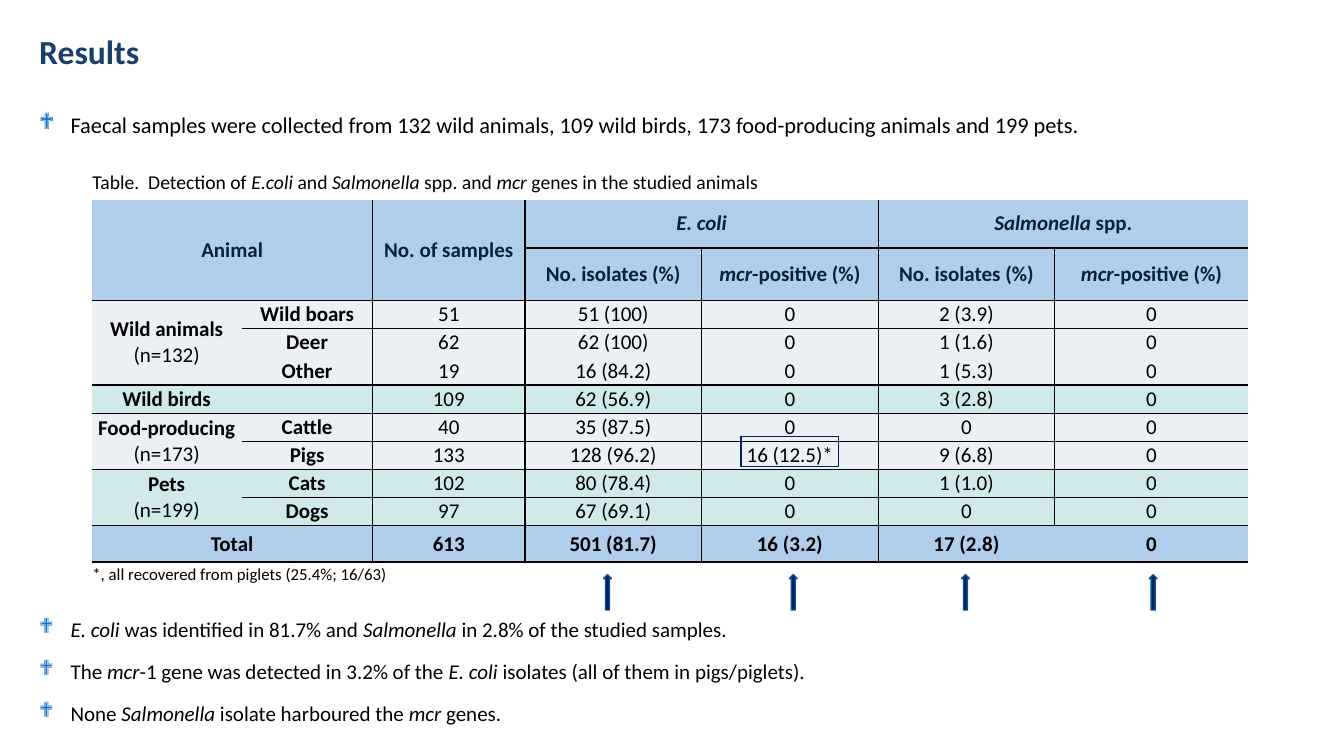
import pptx
import pptx.dml.color
import pptx.enum.shapes
import pptx.enum.text
import pptx.oxml
import pptx.oxml.ns
import pptx.util
import lxml.etree

Cm = pptx.util.Cm
Pt = pptx.util.Pt
Align = pptx.enum.text.PP_ALIGN
Anchor = pptx.enum.text.MSO_ANCHOR
Shape = pptx.enum.shapes.MSO_SHAPE
qn = pptx.oxml.ns.qn

COLORS = {
    "title": "1A3F6C", "text": "000000", "bullet": "0F6FC6",
    "heading": "0C2036", "band": "B0CDEA", "grey": "ECF0F4",
    "teal": "D0EAEC", "mark": "002060", "arrow_edge": "0B5292",
}
NO_GRID_STYLE = "{2D5ABB26-0587-4C30-8999-92F81FD0307C}"

COLUMN_WIDTHS = [3.78, 3.3, 3.84, 4.45, 4.45, 4.45, 4.88]
ROW_HEIGHTS = [1.22, 1.32] + [0.71] * 8 + [0.91]
ROW_FILLS = ["band"] * 2 + ["grey"] * 3 + ["teal"] + ["grey"] * 2 + ["teal"] * 2 + ["band"]
MERGES = [(0, 0, 1, 1), (0, 2, 1, 2), (0, 3, 0, 4), (0, 5, 0, 6),
          (2, 0, 4, 0), (6, 0, 7, 0), (8, 0, 9, 0), (10, 0, 10, 1)]
RULED_COLUMNS = {1, 2, 4}
RULED_ROWS = {1, 4, 5, 7, 9, 10}
DETECTION = [
    ["Animal", "", "No. of samples", "_E. coli_", "", "_Salmonella_ spp.", ""],
    ["", "", "", "No. isolates (%)", "_mcr_-positive (%)", "No. isolates (%)", "_mcr_-positive (%)"],
    ["Wild animals\n(n=132)", "Wild boars", "51", "51 (100)", "0", "2 (3.9)", "0"],
    ["", "Deer", "62", "62 (100)", "0", "1 (1.6)", "0"],
    ["", "Other", "19", "16 (84.2)", "0", "1 (5.3)", "0"],
    ["Wild birds", "", "109", "62 (56.9)", "0", "3 (2.8)", "0"],
    ["Food-producing\n(n=173)", "Cattle", "40", "35 (87.5)", "0", "0", "0"],
    ["", "Pigs", "133", "128 (96.2)", "16 (12.5)*", "9 (6.8)", "0"],
    ["Pets\n(n=199)", "Cats", "102", "80 (78.4)", "0", "1 (1.0)", "0"],
    ["", "Dogs", "97", "67 (69.1)", "0", "0", "0"],
    ["Total", "", "613", "501 (81.7)", "16 (3.2)", "17 (2.8)", "0"],
]
FINDINGS = """_E. coli_ was identified in 81.7% and _Salmonella_ in 2.8% of the studied samples.
The _mcr_-1 gene was detected in 3.2% of the _E. coli_ isolates (all of them in pigs/piglets).
None _Salmonella_ isolate harboured the _mcr_ genes."""


def rgb(name):
    return pptx.dml.color.RGBColor.from_string(COLORS[name])


def add_bullet(paragraph):
    properties = paragraph._p.get_or_add_pPr()
    properties.set("marL", str(Cm(0.79)))
    properties.set("indent", str(-Cm(0.79)))
    color = lxml.etree.SubElement(properties, qn("a:buClr"))
    lxml.etree.SubElement(color, qn("a:srgbClr"), val=COLORS["bullet"])
    lxml.etree.SubElement(properties, qn("a:buFont"), typeface="Wingdings")
    lxml.etree.SubElement(properties, qn("a:buChar"), char="❖")


def write_text(frame, text, font="Calibri", size=15, color="text", bold=False,
               first_bold=False, align=Align.JUSTIFY, before=0, bullet=False):
    for index, line in enumerate(text.split("\n")):
        paragraph = frame.paragraphs[0] if index == 0 else frame.add_paragraph()
        paragraph.alignment = align
        paragraph.space_before = Pt(before)
        if bullet:
            add_bullet(paragraph)
        for part, words in enumerate(line.split("_")):
            if words:
                run = paragraph.add_run()
                run.text = words
                run.font.name = font
                run.font.size = Pt(size)
                run.font.bold = bold or (first_bold and index == 0)
                run.font.italic = part % 2 == 1
                run.font.color.rgb = rgb(color)
        if not line:
            lxml.etree.SubElement(paragraph._p, qn("a:endParaRPr"), sz=str(size * 100))


class ResultsSlide:
    def __init__(self, slide, line_width=1):
        self.slide = slide
        self.line_width = line_width

    def text(self, left, top, width, height, words, wrap=True, anchor=Anchor.TOP, **style):
        box = self.slide.shapes.add_textbox(Cm(left), Cm(top), Cm(width), Cm(height))
        frame = box.text_frame
        frame.word_wrap = wrap
        frame.auto_size = pptx.enum.text.MSO_AUTO_SIZE.SHAPE_TO_FIT_TEXT
        frame.vertical_anchor = anchor
        write_text(frame, words, **style)

    def shape(self, kind, left, top, width, height, line, fill=None, rotation=0):
        mark = self.slide.shapes.add_shape(kind, Cm(left), Cm(top), Cm(width), Cm(height))
        mark.shadow.inherit = False
        mark.rotation = rotation
        if fill:
            mark.fill.solid()
            mark.fill.fore_color.rgb = rgb(fill)
        else:
            mark.fill.background()
        mark.line.color.rgb = rgb(line)
        mark.line.width = Pt(self.line_width)

    def borders(self, cell, row, column):
        sides = {
            "L": column - 1 in RULED_COLUMNS,
            "R": column in RULED_COLUMNS,
            "T": row - 1 in RULED_ROWS or (row == 1 and column >= 3),
            "B": row in RULED_ROWS or (row == 0 and column >= 3),
        }
        properties = cell._tc.get_or_add_tcPr()
        for side, ruled in sides.items():
            if ruled:
                line = lxml.etree.SubElement(properties, qn("a:ln" + side), w=str(Pt(self.line_width)))
                solid = lxml.etree.SubElement(line, qn("a:solidFill"))
                lxml.etree.SubElement(solid, qn("a:srgbClr"), val=COLORS["text"])

    def table(self, left, top, rows):
        frame = self.slide.shapes.add_table(
            len(rows), len(COLUMN_WIDTHS), Cm(left), Cm(top),
            Cm(sum(COLUMN_WIDTHS)), Cm(sum(ROW_HEIGHTS)))
        grid = frame.table
        grid.first_row = grid.horz_banding = False
        grid._tbl.tblPr.find(qn("a:tableStyleId")).text = NO_GRID_STYLE
        for column, width in zip(grid.columns, COLUMN_WIDTHS):
            column.width = Cm(width)
        for row, height in zip(grid.rows, ROW_HEIGHTS):
            row.height = Cm(height)
        for r, values in enumerate(rows):
            for c, value in enumerate(values):
                cell = grid.cell(r, c)
                cell.margin_left = cell.margin_right = cell.margin_top = cell.margin_bottom = 0
                cell.vertical_anchor = Anchor.MIDDLE
                self.borders(cell, r, c)
                cell.fill.solid()
                cell.fill.fore_color.rgb = rgb(ROW_FILLS[r])
                write_text(cell.text_frame, value, align=Align.CENTER,
                           color="heading" if r < 2 else "text",
                           bold=r < 2 or r == len(rows) - 1, first_bold=c < 2)
        for r1, c1, r2, c2 in MERGES:
            grid.cell(r1, c1).merge(grid.cell(r2, c2))


def main():
    deck = pptx.Presentation()
    deck.slide_width = Cm(33.87)
    deck.slide_height = Cm(19.05)
    results = ResultsSlide(deck.slides.add_slide(deck.slide_layouts[6]))
    results.text(0.74, 0.66, 3.07, 1.27, "Results", wrap=False, size=24,
                 color="title", bold=True, align=Align.LEFT)
    results.text(0.74, 2.67, 32.2, 0.94,
                 "Faecal samples were collected from 132 wild animals, 109 wild birds, "
                 "173 food-producing animals and 199 pets.", size=16, before=12, bullet=True)
    results.text(0.74, 15.4, 32.2, 3.04, FINDINGS, before=12, bullet=True)
    results.table(2.31, 5.03, DETECTION)
    results.text(2.08, 4.14, 20.32, 0.86,
                 "Table.  Detection of _E.coli_ and _Salmonella_ spp. and _mcr_ genes in the studied animals",
                 size=14, anchor=Anchor.MIDDLE)
    results.text(2.08, 14.07, 20.32, 0.76, "*, all recovered from piglets (25.4%; 16/63)",
                 size=12, anchor=Anchor.MIDDLE)
    for left in (15.21, 19.89, 24.23, 28.96):
        results.shape(Shape.DOWN_ARROW, left, 14.48, 0.2, 0.89, "arrow_edge", "mark", 180)
    results.shape(Shape.RECTANGLE, 18.67, 11, 2.46, 0.76, "mark")
    deck.save("out.pptx")


if __name__ == "__main__":
    main()
